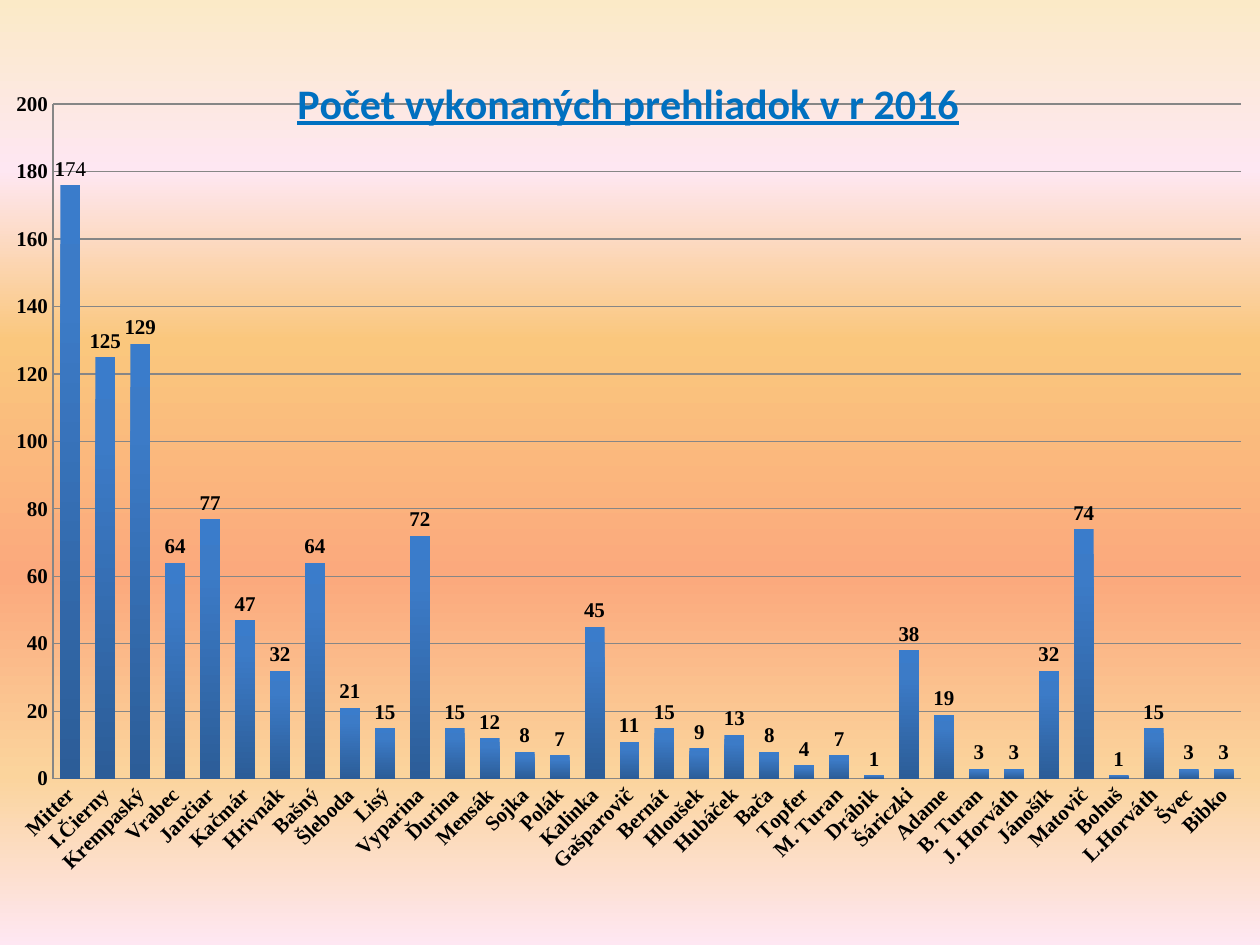
import pptx
import pptx.chart.data
import pptx.dml.color
import pptx.enum.chart
import pptx.oxml
import pptx.oxml.ns
import pptx.util
from pptx.util import Cm

TITLE = "Počet vykonaných prehliadok v r 2016"
INSPECTIONS = [
    ("Mitter", 176), ("I.Čierny", 125), ("Krempaský", 129), ("Vrabec", 64),
    ("Jančiar", 77), ("Kačmár", 47), ("Hrivnák", 32), ("Bašný", 64),
    ("Šleboda", 21), ("Lisý", 15), ("Vyparina", 72), ("Ďurina", 15),
    ("Mensák", 12), ("Sojka", 8), ("Polák", 7), ("Kalinka", 45),
    ("Gašparovič", 11), ("Bernát", 15), ("Hloušek", 9), ("Hubáček", 13),
    ("Bača", 8), ("Topfer", 4), ("M. Turan", 7), ("Drábik", 1),
    ("Šáriczki", 38), ("Adame", 19), ("B. Turan", 3), ("J. Horváth", 3),
    ("Jánošík", 32), ("Matovič", 74), ("Bohuš", 1), ("L.Horváth", 15),
    ("Švec", 3), ("Bibko", 3),
]
FIRST_LABEL = [("1", True), ("74", False)]
SKY = [(0, "FBEAC7"), (18, "FEE7F2"), (36, "FAC77D"),
       (61, "FBA97D"), (82, "FBD49C"), (100, "FEE7F2")]
BAR = [(0, "3A7CCB"), (20, "3C7BC7"), (100, "2C5D98")]
LINE = "868686"
SERIF = "Times New Roman"


def rgb(color):
    return pptx.dml.color.RGBColor.from_string(color)


def style_font(font, size, bold=True, name=SERIF, color="000000"):
    font.size = pptx.util.Pt(size)
    font.bold = bold
    font.name = name
    font.color.rgb = rgb(color)


def fill_downwards(fill, parent, stops):
    """Give a fill a top-to-bottom gradient of (percent, colour) stops."""
    fill.gradient()
    old = parent.find(pptx.oxml.ns.qn("a:gradFill"))
    stop_xml = "".join(
        f'<a:gs pos="{percent * 1000}"><a:srgbClr val="{color}"/></a:gs>'
        for percent, color in stops)
    new = pptx.oxml.parse_xml(
        f'<a:gradFill {pptx.oxml.ns.nsdecls("a")} rotWithShape="1">'
        f'<a:gsLst>{stop_xml}</a:gsLst><a:lin ang="5400000" scaled="0"/></a:gradFill>')
    parent.replace(old, new)


def place(element, index, **values):
    """Set a manual layout, in fractions of the chart, at a child index."""
    for old in element.findall(pptx.oxml.ns.qn("c:layout")):
        element.remove(old)
    parts = "".join(f'<c:{key} val="{value}"/>' for key, value in values.items())
    element.insert(index, pptx.oxml.parse_xml(
        f'<c:layout {pptx.oxml.ns.nsdecls("c")}>'
        f'<c:manualLayout>{parts}</c:manualLayout></c:layout>'))


def add_title(chart):
    title = chart.chart_title
    span = title.text_frame.paragraphs[0].add_run()
    span.text = TITLE
    style_font(span.font, 24, name="Calibri", color="0070C0")
    span.font.underline = True
    element = title._element
    place(element, 1, xMode="edge", yMode="edge", x=0.23, y=0.04)
    element.find(pptx.oxml.ns.qn("c:overlay")).set("val", "1")


def style_axes(chart):
    for axis in (chart.category_axis, chart.value_axis):
        axis.major_tick_mark = pptx.enum.chart.XL_TICK_MARK.NONE
        axis.minor_tick_mark = pptx.enum.chart.XL_TICK_MARK.NONE
        axis.format.line.color.rgb = rgb(LINE)
        style_font(axis.tick_labels.font, 12)
    names = chart.category_axis._element
    names.find(pptx.oxml.ns.qn("c:txPr")).find(
        pptx.oxml.ns.qn("a:bodyPr")).set("rot", "-2700000")
    values = chart.value_axis
    values.minimum_scale, values.maximum_scale, values.major_unit = 0, 200, 20
    values.has_major_gridlines = True
    values.major_gridlines.format.line.color.rgb = rgb(LINE)


def style_bars(plot):
    plot.gap_width, plot.overlap = 75, -25
    plot.vary_by_categories = False
    series = plot.series[0]
    bar_format = series.format
    fill_downwards(bar_format.fill,
                   series._element.find(pptx.oxml.ns.qn("c:spPr")), BAR)
    outside = pptx.enum.chart.XL_LABEL_POSITION.OUTSIDE_END
    labels = series.data_labels
    labels.show_value = True
    labels.position = outside
    style_font(labels.font, 12)
    label = series.points[0].data_label
    para = label.text_frame.paragraphs[0]
    for text, bold in FIRST_LABEL:
        span = para.add_run()
        span.text = text
        style_font(span.font, 12, bold)
    label.position = outside


def main():
    deck = pptx.Presentation()
    deck.slide_width, deck.slide_height = Cm(25.4), Cm(19.05)
    page = deck.slides.add_slide(deck.slide_layouts[6])
    fill = page.background.fill
    fill_downwards(fill, page._element.cSld.bg.bgPr, SKY)

    data = pptx.chart.data.CategoryChartData()
    data.categories = [name for name, count in INSPECTIONS]
    data.add_series("Series 1", [count for name, count in INSPECTIONS])
    chart = page.shapes.add_chart(
        pptx.enum.chart.XL_CHART_TYPE.COLUMN_CLUSTERED,
        Cm(0), Cm(0.64), Cm(25.4), Cm(17.78), data).chart
    style_font(chart.font, 10, bold=False, name="Calibri")
    chart.has_legend = False
    add_title(chart)
    style_axes(chart)
    style_bars(chart.plots[0])
    plot_area = chart._chartSpace.chart.plotArea
    place(plot_area, 0, layoutTarget="inner", xMode="edge", yMode="edge",
          x=0.042, y=0.082, w=0.943, h=0.765)
    deck.save("out.pptx")


if __name__ == "__main__":
    main()
